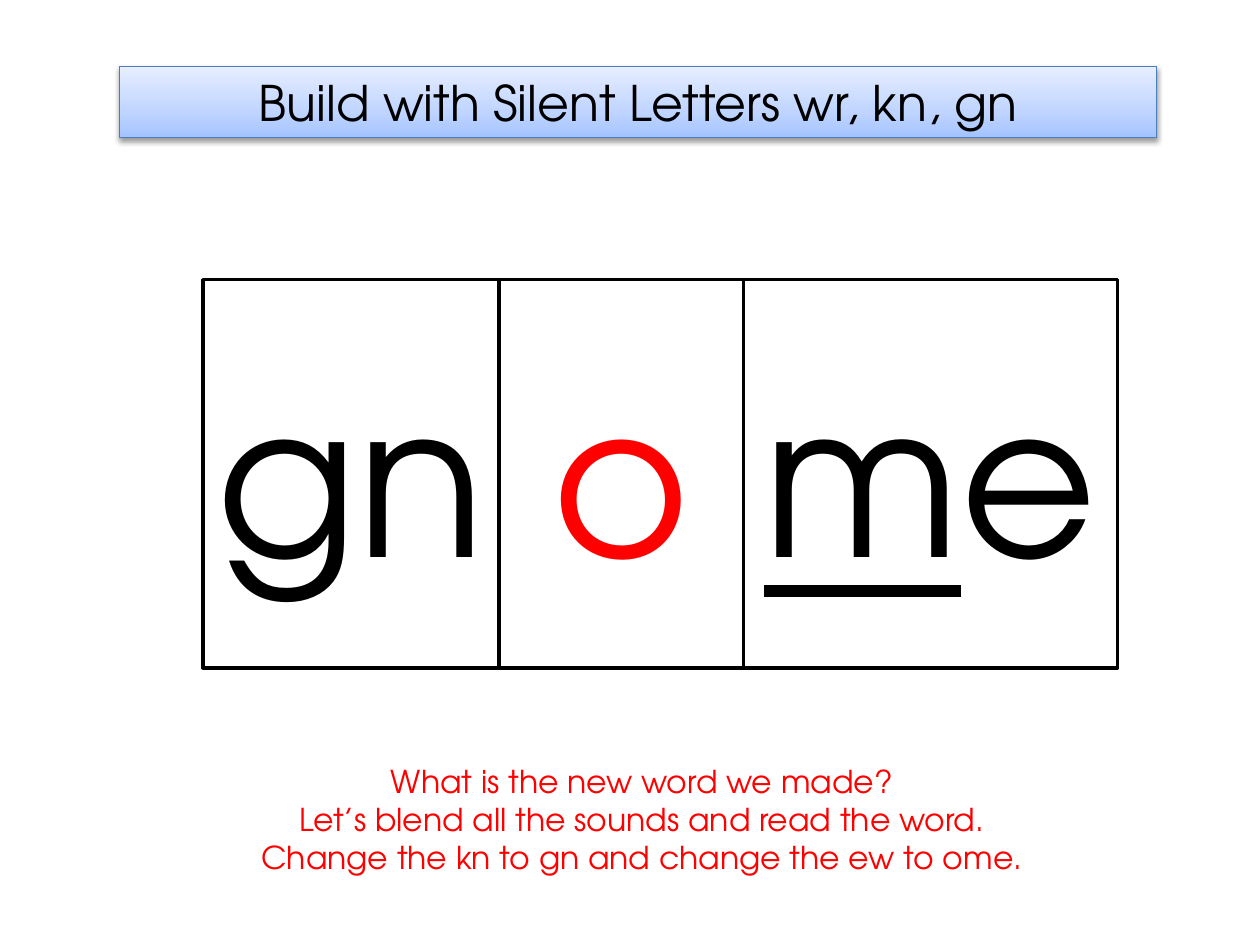
from copy import deepcopy
from dataclasses import dataclass

from lxml import etree
from pptx import Presentation, util as u
from pptx.dml.color import RGBColor
from pptx.enum import shapes, text
from pptx.oxml import parse_xml
from pptx.oxml.ns import nsdecls, qn


@dataclass(frozen=True)
class Theme:
    font: str = "TeX Gyre Adventor"
    black: str = "000000"
    white: str = "FFFFFF"
    red: str = "FF0000"
    edge: str = "4B7EBC"
    blues: tuple = ((0, "A4C4FF"), (0.35, "BFD4FF"), (1, "E6EEFF"))
    head: int = 28
    tile: int = 120
    note: int = 18


@dataclass(frozen=True)
class Tile:
    width: float
    runs: tuple  # (letters, colour, underlined)


T = Theme()
LEFT, TOP, HIGH = 1.61, 2.22, 3.08
TILES = (
    Tile(2.35, (("gn", T.black, False),)),
    Tile(1.94, (("o", T.red, False),)),
    Tile(2.97, (("m", T.black, True), ("e", T.black, False))),
)
TITLE = "Build with Silent Letters wr, kn, gn"
NOTES = (
    "What is the new word we made?",
    "Let’s blend all the sounds and read the word.",
    "Change the kn to gn and change the ew to ome.",
)


def rgb(code: str) -> RGBColor:
    return RGBColor.from_string(code)


def style(item, **form) -> None:
    for key, val in form.items():
        setattr(item, key, val)


def write(para, words: str, size: int, color: str, line: bool = False) -> None:
    para.alignment = text.PP_ALIGN.CENTER
    run = para.add_run()
    run.text = words
    style(run.font, name=T.font, size=u.Pt(size), underline=line)
    run.font.color.rgb = rgb(color)


def border(shape, color: str, width: float) -> None:
    shape.line.color.rgb = rgb(color)
    shape.line.width = u.Pt(width)


def shade(shape) -> None:
    """Fill with the theme's blues, rising from the bottom, and add a soft shadow."""
    shape.fill.gradient()
    shape.fill.gradient_angle = 90
    props = shape._element.spPr
    stops = next(props.iter(qn("a:gsLst")))
    stops.append(deepcopy(stops[-1]))
    for stop, (pos, color) in zip(shape.fill.gradient_stops, T.blues):
        stop.position = pos
        stop.color.rgb = rgb(color)
    border(shape, T.edge, 0.75)
    glow = parse_xml(f"<a:effectLst {nsdecls('a')}/>")
    cast = etree.SubElement(glow, qn("a:outerShdw"), blurRad=str(u.Pt(3.1)),
                            dist=str(u.Pt(1.6)), dir="5400000", rotWithShape="0")
    tint = etree.SubElement(cast, qn("a:srgbClr"), val=T.black)
    etree.SubElement(tint, qn("a:alpha"), val="38000")
    props.append(glow)


def add_title(slide) -> None:
    title = slide.shapes.title
    style(title, left=u.Inches(0.95), top=u.Inches(0.53),
          width=u.Inches(8.23), height=u.Inches(0.56))
    shade(title)
    style(title.text_frame, auto_size=text.MSO_AUTO_SIZE.NONE, word_wrap=True,
          vertical_anchor=text.MSO_ANCHOR.MIDDLE)
    write(title.text_frame.paragraphs[0], TITLE, T.head, T.black)


def add_tile(slide, tile: Tile, left: float) -> None:
    box = slide.shapes.add_shape(
        shapes.MSO_SHAPE.RECTANGLE, u.Inches(left), u.Inches(TOP),
        u.Inches(tile.width), u.Inches(HIGH))
    box.shadow.inherit = False
    box.fill.solid()
    box.fill.fore_color.rgb = rgb(T.white)
    border(box, T.black, 2)
    box.text_frame.vertical_anchor = text.MSO_ANCHOR.MIDDLE
    for words, color, line in tile.runs:
        write(box.text_frame.paragraphs[0], words, T.tile, color, line)


def add_notes(slide) -> None:
    frame = slide.shapes.add_textbox(
        u.Inches(LEFT), u.Inches(6), u.Inches(6.97), u.Inches(1.01)).text_frame
    style(frame, word_wrap=True, auto_size=text.MSO_AUTO_SIZE.SHAPE_TO_FIT_TEXT)
    for i, words in enumerate(NOTES):
        para = frame.add_paragraph() if i else frame.paragraphs[0]
        write(para, words, T.note, T.red)


def main() -> None:
    deck = Presentation()
    style(deck, slide_width=u.Inches(10), slide_height=u.Inches(7.5))
    slide = deck.slides.add_slide(deck.slide_layouts[5])
    add_title(slide)
    left = LEFT
    for tile in TILES:
        add_tile(slide, tile, left)
        left += tile.width
    add_notes(slide)
    deck.save("out.pptx")


if __name__ == "__main__":
    main()
